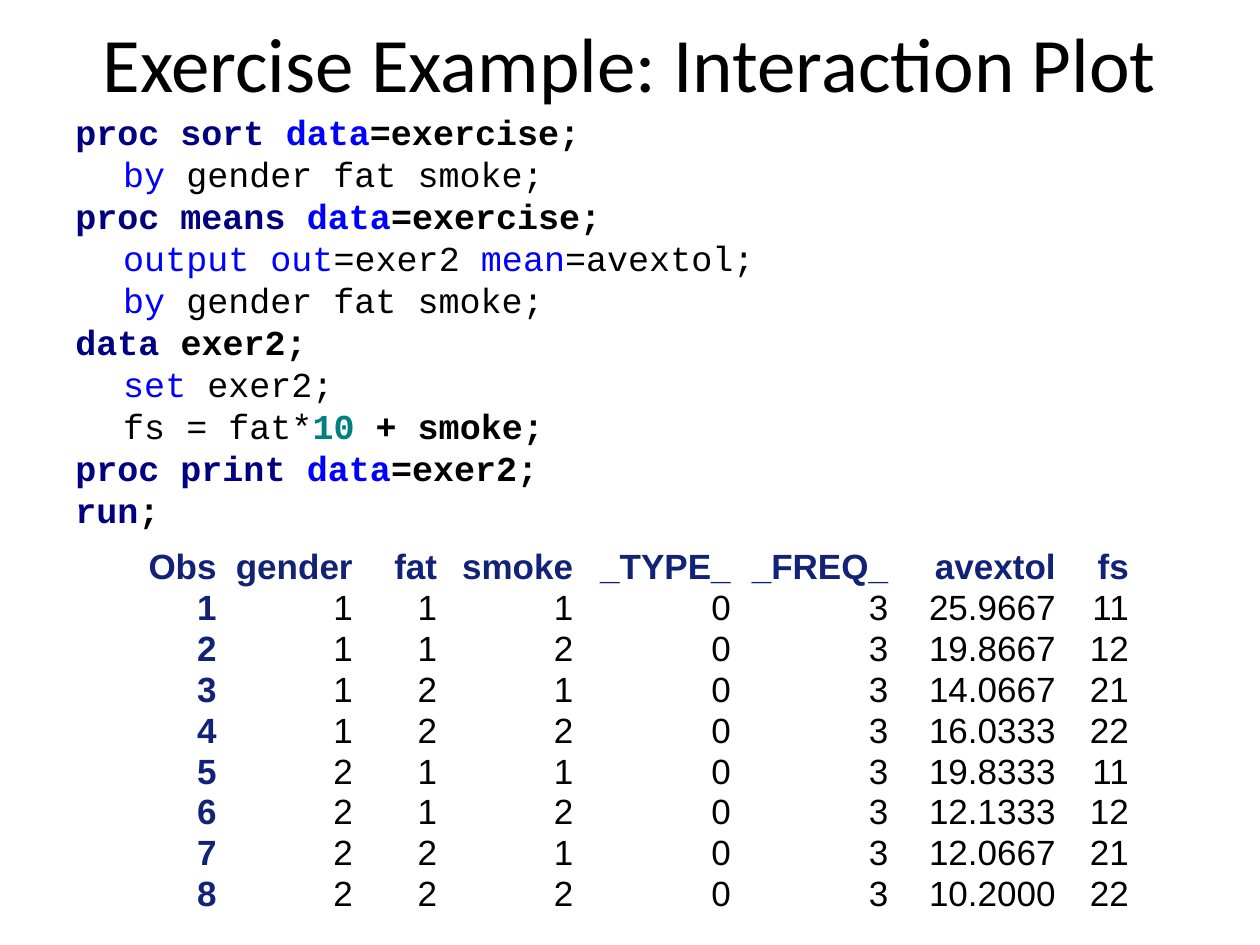
from dataclasses import dataclass
from typing import Any

from pptx import Presentation
from pptx.dml.color import RGBColor
from pptx.enum.text import MSO_ANCHOR, PP_ALIGN
from pptx.util import Inches, Pt

BLACK = RGBColor(0x00, 0x00, 0x00)
NAVY = RGBColor(0x00, 0x00, 0x80)
BLUE = RGBColor(0x00, 0x00, 0xFF)
TEAL = RGBColor(0x00, 0x80, 0x80)
HEADING = RGBColor(0x11, 0x22, 0x77)

STEP = (NAVY, True)
OPTION = (BLUE, True)
STRONG = (BLACK, True)
KEYWORD = (BLUE, False)
PLAIN = (BLACK, False)
NUMBER = (TEAL, True)


def proc_line(step, dataset):
    return [(f"proc {step} ", STEP), ("data", OPTION), (f"={dataset};", STRONG)]


BY_LINE = [("\t", PLAIN), ("by", KEYWORD), (" gender fat smoke;", PLAIN)]
PROGRAM = [
    proc_line("sort", "exercise"),
    BY_LINE,
    proc_line("means", "exercise"),
    [("\t", PLAIN), ("output out", KEYWORD), ("=exer2 ", PLAIN),
     ("mean", KEYWORD), ("=avextol;", PLAIN)],
    BY_LINE,
    [("data", STEP), (" exer2;", STRONG)],
    [("\t", PLAIN), ("set", KEYWORD), (" exer2;", PLAIN)],
    [("\tfs = fat*", PLAIN), ("10", NUMBER), (" + smoke;", STRONG)],
    proc_line("print", "exer2"),
    [("run", STEP), (";", STRONG)],
]

COLUMNS = {"Obs": 0.67, "gender": 1.08, "fat": 0.67, "smoke": 1.08,
           "_TYPE_": 1.25, "_FREQ_": 1.25, "avextol": 1.33, "fs": 0.58}
MEANS = [
    (1, 1, 1, "25.9667"), (1, 1, 2, "19.8667"),
    (1, 2, 1, "14.0667"), (1, 2, 2, "16.0333"),
    (2, 1, 1, "19.8333"), (2, 1, 2, "12.1333"),
    (2, 2, 1, "12.0667"), (2, 2, 2, "10.2000"),
]


@dataclass
class SlideBuilder:
    deck: Any
    slide: Any
    title_font: str = "Calibri"
    code_font: str = "Courier New"
    table_font: str = "Arial"
    title_size: int = 44
    body_size: int = 20

    def place(self, left, top, width, height):
        across, down = self.deck.slide_width, self.deck.slide_height
        return (round(left * across), round(top * down),
                round(width * across), round(height * down))

    def text_frame(self, area):
        frame = self.slide.shapes.add_textbox(*self.place(*area)).text_frame
        frame.word_wrap = True
        return frame

    def set_font(self, font, name, size, color, bold):
        font.name, font.size, font.bold = name, Pt(size), bold
        font.color.rgb = color

    def title(self, wording, area):
        frame = self.text_frame(area)
        frame.vertical_anchor = MSO_ANCHOR.MIDDLE
        heading = frame.paragraphs[0]
        heading.text = wording
        heading.alignment = PP_ALIGN.CENTER
        self.set_font(heading.font, self.title_font, self.title_size, *PLAIN)

    def program(self, lines, area):
        frame = self.text_frame(area)
        for number, tokens in enumerate(lines):
            line = frame.add_paragraph() if number else frame.paragraphs[0]
            line.line_spacing = Pt(24)
            properties = line._p.get_or_add_pPr()
            properties.set("marL", str(Inches(0.38)))
            properties.set("indent", str(Inches(-0.38)))
            for wording, style in tokens:
                token = line.add_run()
                token.text = wording
                self.set_font(token.font, self.code_font, self.body_size, *style)

    def table(self, columns, records, area):
        rows = [list(columns), *records]
        grid = self.slide.shapes.add_table(
            len(rows), len(columns), *self.place(*area)).table
        grid.first_row = grid.horz_banding = False
        for column, width in zip(grid.columns, columns.values()):
            column.width = Inches(width)
        for r, record in enumerate(rows):
            for c, value in enumerate(record):
                style = (HEADING, True) if r == 0 or c == 0 else PLAIN
                self.table_cell(grid.cell(r, c), value, style)

    def table_cell(self, cell, value, style):
        cell.fill.background()
        cell.margin_left = cell.margin_right = Inches(0.05)
        cell.margin_top = cell.margin_bottom = 0
        cell.vertical_anchor = MSO_ANCHOR.MIDDLE
        entry = cell.text_frame.paragraphs[0]
        entry.text = str(value)
        entry.alignment = PP_ALIGN.RIGHT
        entry.line_spacing = 0.97
        self.set_font(entry.font, self.table_font, self.body_size, *style)


def main():
    deck = Presentation()
    deck.slide_width, deck.slide_height = Inches(10), Inches(7.5)
    builder = SlideBuilder(deck, deck.slides.add_slide(deck.slide_layouts[6]))
    builder.title("Exercise Example: Interaction Plot", (0.05, 0, 0.9, 0.13))
    builder.program(PROGRAM, (0.05, 0.11, 0.9, 0.46))
    records = [(obs, gender, fat, smoke, 0, 3, mean, fat * 10 + smoke)
               for obs, (gender, fat, smoke, mean) in enumerate(MEANS, 1)]
    builder.table(COLUMNS, records, (0.11, 0.58, 0.79, 0.37))
    deck.save("out.pptx")


if __name__ == "__main__":
    main()
